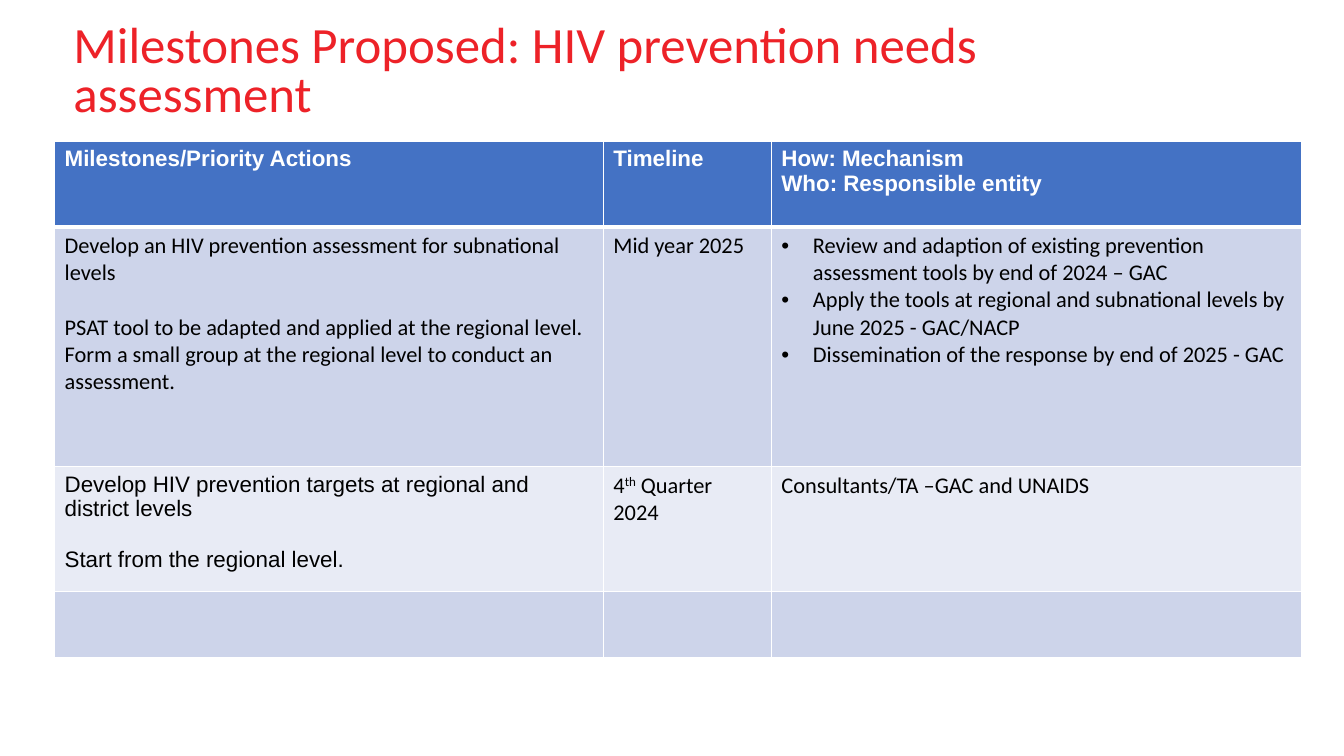
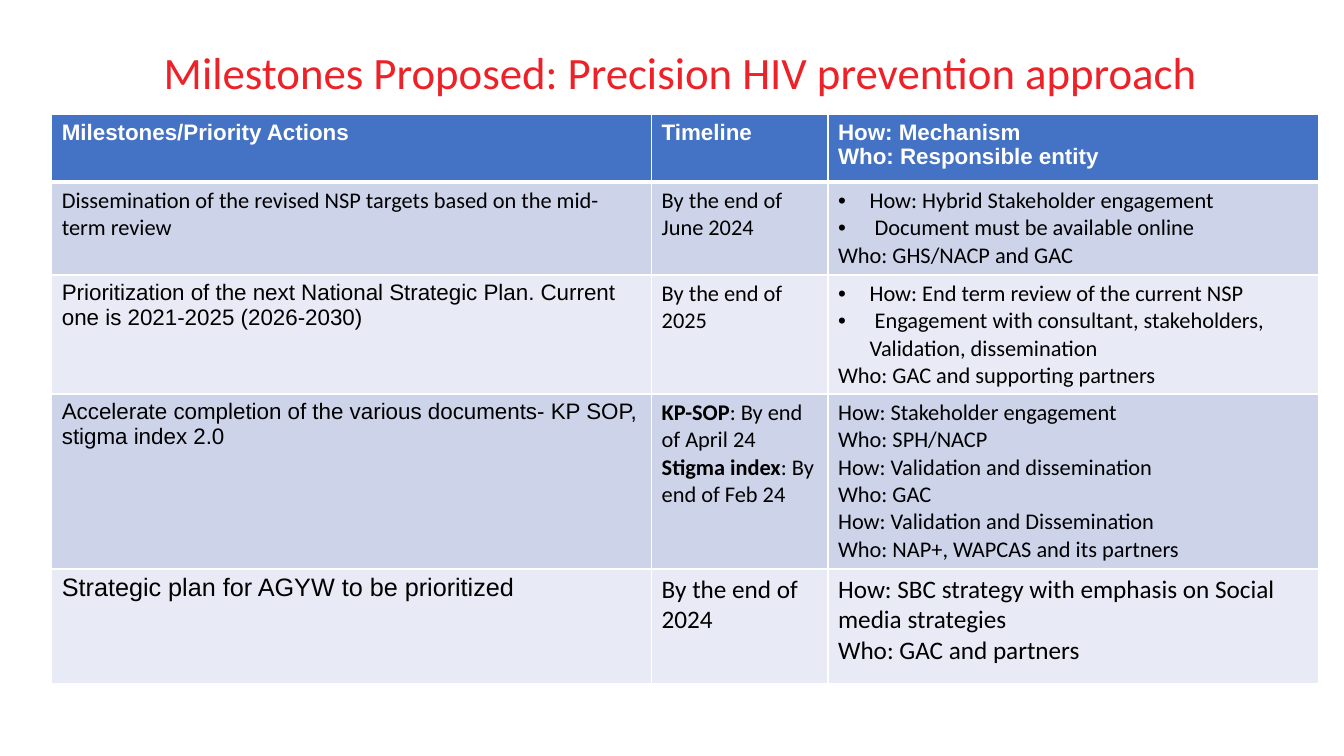
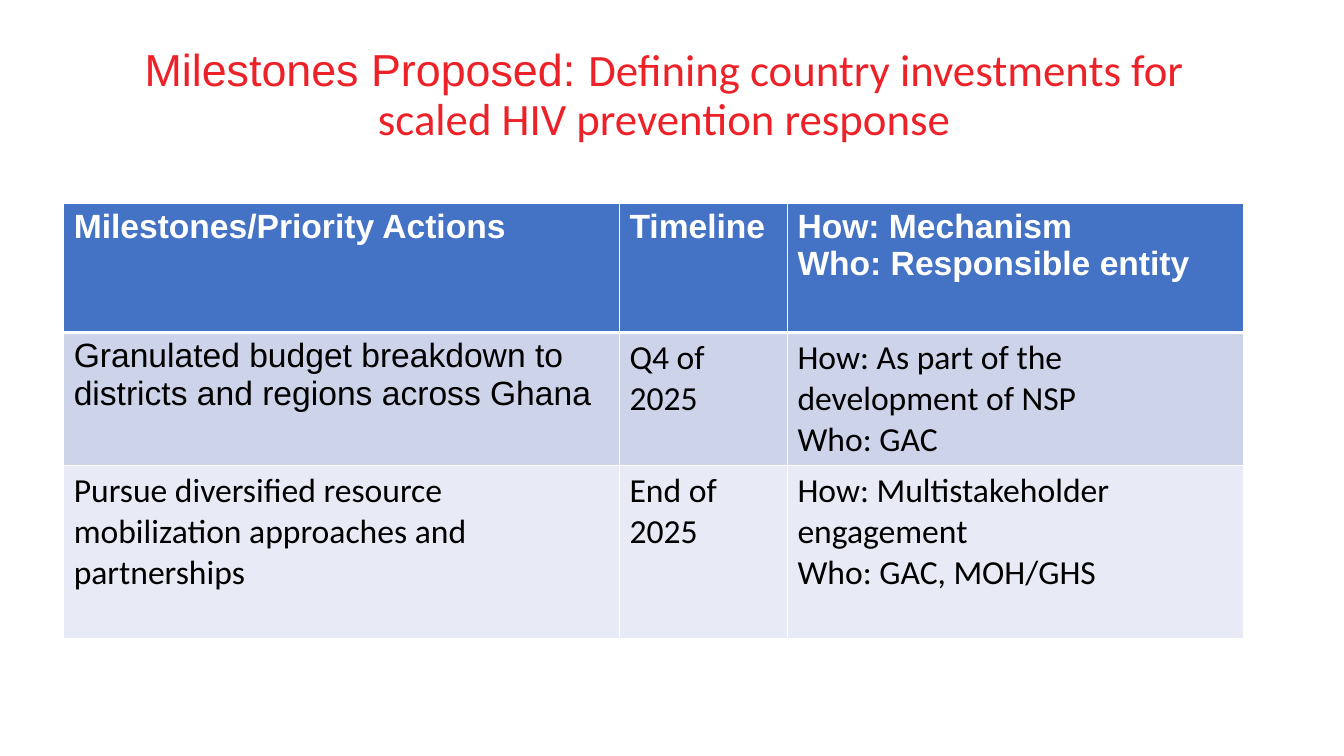
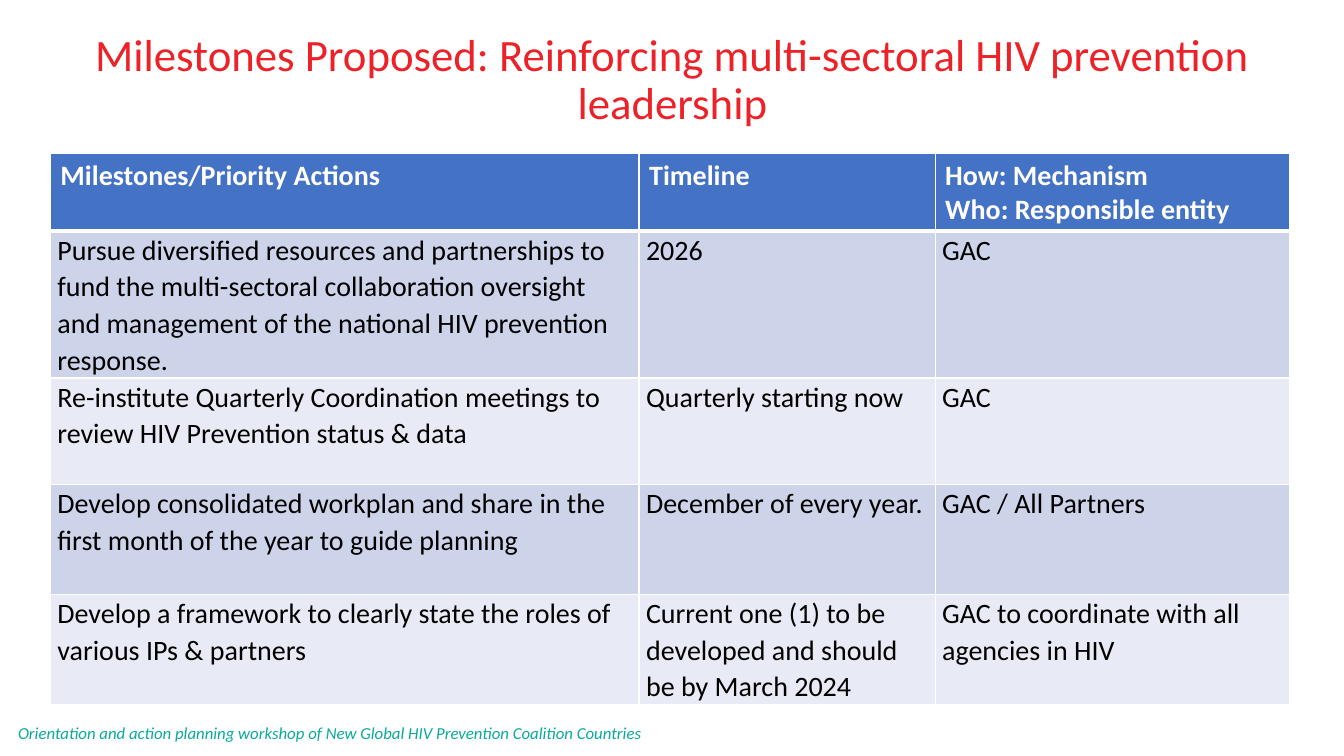
from dataclasses import dataclass

from lxml.etree import SubElement
from pptx import Presentation
from pptx.dml.color import RGBColor
from pptx.enum.text import MSO_ANCHOR, PP_ALIGN
from pptx.oxml.ns import qn
from pptx.util import Pt

RED = RGBColor(0xED, 0x22, 0x28)
TEAL = RGBColor(0x0A, 0xAA, 0x9A)
BLUE = RGBColor(0x44, 0x72, 0xC4)
BANDS = RGBColor(0xCD, 0xD4, 0xEA), RGBColor(0xE8, 0xEB, 0xF5)
WHITE = RGBColor(0xFF, 0xFF, 0xFF)
BLACK = RGBColor(0, 0, 0)

BODY, ALTERNATE = "Calibri", "Arial"
BULLET_INDENT = 22.5
INSETS = 7.2, 3.6
THIN, THICK = 1, 3


@dataclass
class Bullet:
    text: str


@dataclass
class Cell:
    """Paragraphs are strings, Bullets, or lists of (text, style) runs."""
    paragraphs: list
    font: str = BODY
    size: float = 0
    gap: float = 0


@dataclass
class Grid:
    left: float
    top: float
    columns: list
    heights: list
    size: float
    rows: list
    header_font: str = ALTERNATE
    insets: tuple = INSETS
    spacing: float = 1.0


HEADER = [
    ["Milestones/Priority Actions"],
    ["Timeline"],
    ["How: Mechanism", "Who: Responsible entity"],
]

SLIDES = [
    {
        "title": [("Milestones Proposed: HIV prevention needs assessment", BODY)],
        "box": (45.4, 11.5, 806, 82), "size": 36.3,
        "align": PP_ALIGN.LEFT, "spacing": 0.8,
        "grid": Grid(39, 101, [392, 120, 378.5], [61, 171.5, 89, 47.5], 16, [
            [Cell(["Develop an HIV prevention assessment for subnational levels",
                   "PSAT tool to be adapted and applied at the regional level. Form a small "
                   "group at the regional level to conduct an assessment."], gap=19.5),
             Cell(["Mid year 2025"]),
             Cell([Bullet("Review and adaption of existing prevention assessment tools "
                          "by end of 2024 – GAC"),
                   Bullet("Apply the tools at regional and subnational levels by "
                          "June 2025 - GAC/NACP"),
                   Bullet("Dissemination of the response by end of 2025 - GAC")])],
            [Cell(["Develop HIV prevention targets at regional and district levels",
                   "Start from the regional level."], ALTERNATE, gap=18),
             Cell([[("4", ""), ("th", "superscript"), (" Quarter 2024", "")]]),
             Cell(["Consultants/TA –GAC and UNAIDS"])],
            [Cell([]), Cell([]), Cell([])],
        ]),
    },
    {
        "title": [("Milestones Proposed: Precision HIV prevention approach", BODY)],
        "box": (24.5, 14.4, 923.5, 78),
        "grid": Grid(37, 82, [428.5, 126, 350.5], [48, 66.5, 85, 125, 82], 16, [
            [Cell(["Dissemination of the revised NSP targets based on the mid-term review"]),
             Cell(["By the end of June 2024"]),
             Cell([Bullet("How: Hybrid Stakeholder engagement"),
                   Bullet(" Document must be available online"),
                   "Who: GHS/NACP and GAC"])],
            [Cell(["Prioritization of the next National Strategic Plan. Current one is "
                   "2021-2025 (2026-2030)"], ALTERNATE),
             Cell(["By the end of 2025"]),
             Cell([Bullet("How: End term review of the current NSP"),
                   Bullet(" Engagement with consultant, stakeholders, Validation, "
                          "dissemination"),
                   "Who: GAC and supporting partners"])],
            [Cell(["Accelerate completion of the various documents- KP SOP, "
                   "stigma index 2.0"], ALTERNATE),
             Cell([[("KP-SOP", "bold"), (": By end of April 24", "")],
                   [("Stigma index", "bold"), (": By end of Feb 24", "")]]),
             Cell(["How: Stakeholder engagement", "Who: SPH/NACP",
                   "How: Validation and dissemination", "Who: GAC",
                   "How: Validation and Dissemination",
                   "Who: NAP+, WAPCAS and its partners"])],
            [Cell(["Strategic plan for AGYW to be prioritized"], ALTERNATE, 18),
             Cell(["By the end of 2024"], size=18),
             Cell(["How: SBC strategy with emphasis on Social media strategies",
                   "Who: GAC and partners"], size=18)],
        ]),
    },
    {
        "title": [("Milestones Proposed: ", ALTERNATE),
                  ("Defining country investments for scaled HIV prevention response", BODY)],
        "box": (60.5, 28, 828, 82),
        "grid": Grid(45.5, 145, [397, 120, 326], [92.5, 95, 124], 24, [
            [Cell(["Granulated budget breakdown to districts and regions across Ghana"],
                  ALTERNATE),
             Cell(["Q4 of 2025"]),
             Cell(["How: As part of the development of NSP", "Who: GAC"])],
            [Cell(["Pursue diversified resource mobilization approaches and partnerships"]),
             Cell(["End of 2025"]),
             Cell(["How: Multistakeholder engagement", "Who: GAC, MOH/GHS"])],
        ]),
    },
    {
        "title": [("Milestones Proposed: Reinforcing multi-sectoral HIV prevention "
                   "leadership", BODY)],
        "box": (21, 15.8, 918.7, 84),
        "footer": "Orientation and action planning workshop of New Global HIV Prevention "
                  "Coalition Countries",
        "grid": Grid(36, 109.5, [420.5, 211.5, 253], [55.5, 105, 76, 78.5, 78.5], 20, [
            [Cell(["Pursue diversified resources and partnerships to fund the multi-sectoral "
                   "collaboration oversight and management of the national HIV prevention "
                   "response."]),
             Cell(["2026"]), Cell(["GAC"])],
            [Cell(["Re-institute Quarterly Coordination meetings to review HIV Prevention "
                   "status & data"]),
             Cell(["Quarterly starting now"]), Cell(["GAC"])],
            [Cell(["Develop consolidated workplan and share in the first month of the year "
                   "to guide planning"]),
             Cell(["December of every year."]), Cell(["GAC / All Partners"])],
            [Cell(["Develop a framework to clearly state the roles of various IPs & partners"]),
             Cell(["Current one (1) to be developed and should be by March 2024"]),
             Cell(["GAC to coordinate with all agencies in HIV"])],
        ], header_font=BODY, insets=(5, 0), spacing=1.07),
    },
]


def add_run(paragraph, text, font, size, color, bold=False, italic=False):
    run = paragraph.add_run()
    run.text = text
    run.font.name, run.font.size = font, Pt(size)
    run.font.color.rgb = color
    run.font.bold, run.font.italic = bold, italic
    return run


def add_line(slide, box, runs, size, color, align=PP_ALIGN.LEFT, spacing=1.0, italic=False):
    """Add a vertically centred box with one paragraph of (text, font) runs."""
    frame = slide.shapes.add_textbox(*map(Pt, box)).text_frame
    frame.word_wrap = True
    frame.vertical_anchor = MSO_ANCHOR.MIDDLE
    paragraph = frame.paragraphs[0]
    paragraph.alignment, paragraph.line_spacing = align, spacing
    for text, font in runs:
        add_run(paragraph, text, font, size, color, italic=italic)


def set_bullet(paragraph):
    properties = paragraph._p.get_or_add_pPr()
    properties.set("marL", str(Pt(BULLET_INDENT)))
    properties.set("indent", str(-Pt(BULLET_INDENT)))
    SubElement(properties, qn("a:buFont"), typeface="Arial")
    SubElement(properties, qn("a:buChar"), char="•")


def set_borders(cell, top, bottom):
    properties = cell._tc.get_or_add_tcPr()
    for side, width in zip("LRTB", (THIN, THIN, top, bottom)):
        line = SubElement(properties, qn(f"a:ln{side}"), w=str(Pt(width)))
        fill = SubElement(line, qn("a:solidFill"))
        SubElement(fill, qn("a:srgbClr"), val=str(WHITE))


def fill_cell(cell, content, size, color, bold, insets, spacing):
    cell.margin_left = cell.margin_right = Pt(insets[0])
    cell.margin_top = cell.margin_bottom = Pt(insets[1])
    frame = cell.text_frame
    for index, item in enumerate(content.paragraphs):
        paragraph = frame.add_paragraph() if index else frame.paragraphs[0]
        paragraph.line_spacing = spacing
        if index and content.gap:
            paragraph.space_before = Pt(content.gap)
        if isinstance(item, Bullet):
            set_bullet(paragraph)
            item = item.text
        for text, style in [(item, "")] if isinstance(item, str) else item:
            run = add_run(paragraph, text, content.font, content.size or size, color,
                          bold or style == "bold")
            if style == "superscript":
                run._r.get_or_add_rPr().set("baseline", "30000")


def add_grid(slide, grid):
    rows = [[Cell(lines, grid.header_font) for lines in HEADER]] + grid.rows
    table = slide.shapes.add_table(
        len(rows), len(grid.columns), Pt(grid.left), Pt(grid.top),
        Pt(sum(grid.columns)), Pt(sum(grid.heights))).table
    for column, width in zip(table.columns, grid.columns):
        column.width = Pt(width)
    for r, (row, height) in enumerate(zip(rows, grid.heights)):
        table.rows[r].height = Pt(height)
        header = r == 0
        for c, content in enumerate(row):
            cell = table.cell(r, c)
            set_borders(cell, THICK if r == 1 else THIN, THICK if header else THIN)
            cell.fill.solid()
            cell.fill.fore_color.rgb = BLUE if header else BANDS[(r - 1) % 2]
            fill_cell(cell, content, grid.size, WHITE if header else BLACK, header,
                      INSETS if header else grid.insets, 1.0 if header else grid.spacing)


def main():
    deck = Presentation()
    deck.slide_width, deck.slide_height = Pt(960), Pt(540)
    for content in SLIDES:
        slide = deck.slides.add_slide(deck.slide_layouts[6])
        add_line(slide, content["box"], content["title"], content.get("size", 32), RED,
                 content.get("align", PP_ALIGN.CENTER), content.get("spacing", 0.9))
        if "footer" in content:
            add_line(slide, (5.8, 512.6, 496, 21), [(content["footer"], BODY)], 12, TEAL,
                     italic=True)
        add_grid(slide, content["grid"])
    deck.save("out.pptx")


if __name__ == "__main__":
    main()
